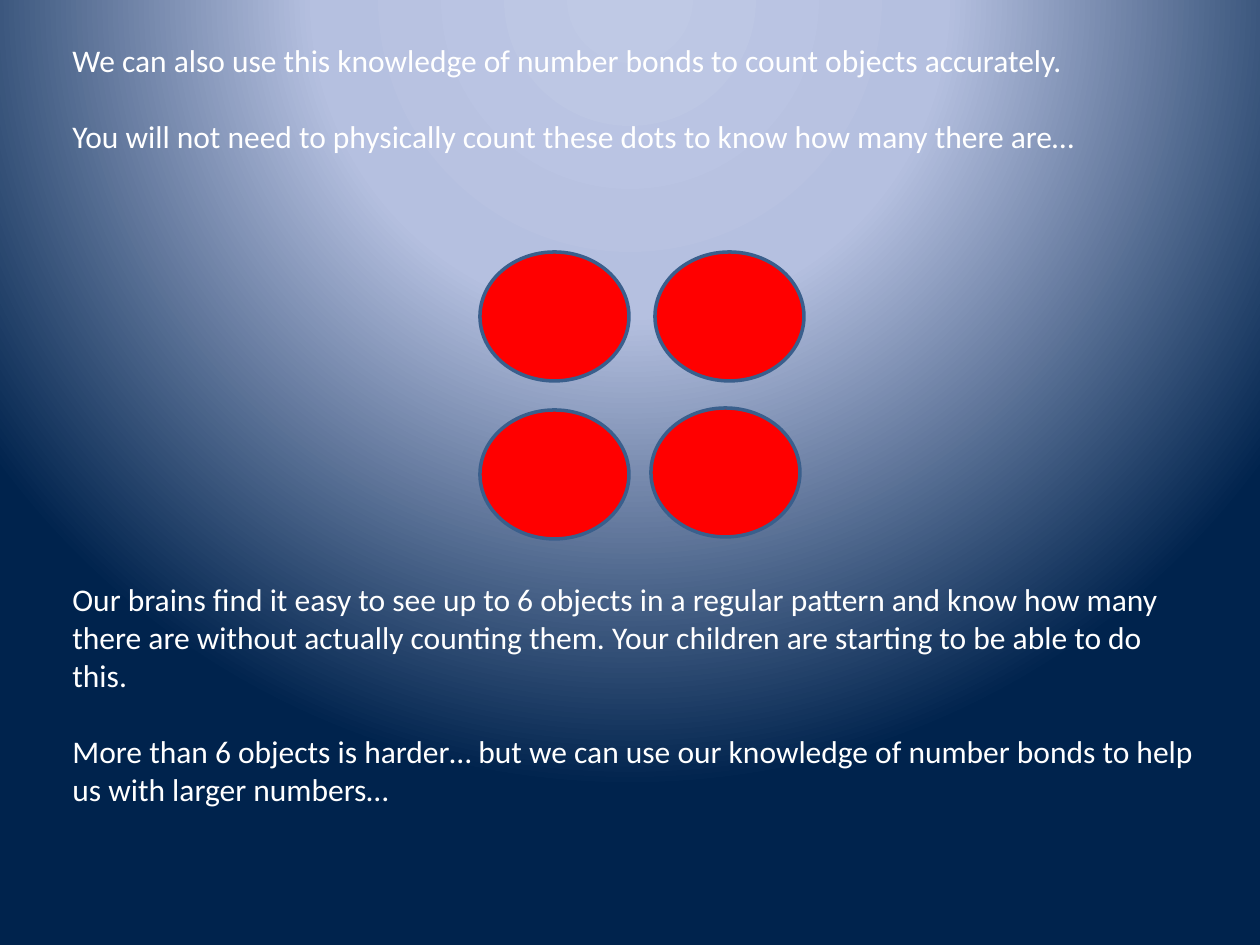
"""Build a slide on counting a regular pattern of dots with number bonds."""
from lxml import etree
from pptx import Presentation
from pptx import util as u
from pptx.dml.color import RGBColor
from pptx.enum import shapes, text
from pptx.oxml import ns, parse_xml

THEME = {
    "font": "Calibri",
    "size": 18,
    "gap": 22,
    "text": "FFFFFF",
    "dot": "FF0000",
    "outline": "3A5F8C",
    "outline_width": 2,
    "glow": [(0, "BFC9E5"), (40, "B5C0E0"), (100, "00234D")],
}
PX = u.Inches(1) / 126


def px(*lengths):
    return [round(length * PX) for length in lengths]


def add_text(slide, paragraphs, *, at, size=THEME["size"], color=THEME["text"], gap=THEME["gap"]):
    box = slide.shapes.add_textbox(*px(*at))
    frame = box.text_frame
    frame.word_wrap = True
    frame.auto_size = text.MSO_AUTO_SIZE.SHAPE_TO_FIT_TEXT
    for index, wording in enumerate(paragraphs):
        para = frame.add_paragraph() if index else frame.paragraphs[0]
        para.space_before = u.Pt(gap if index else 0)
        span = para.add_run()
        span.text = wording
        span.font.name = THEME["font"]
        span.font.size = u.Pt(size)
        span.font.color.rgb = RGBColor.from_string(color)


deck = Presentation()
deck.slide_width, deck.slide_height = px(1260, 945)
page = deck.slides.add_slide(deck.slide_layouts[6])

page.background.fill.gradient()
gradient = page.element.find(".//" + ns.qn("a:gradFill"))
for child in list(gradient):
    gradient.remove(child)
stops = etree.SubElement(gradient, ns.qn("a:gsLst"))
for percent, color in THEME["glow"]:
    stop = etree.SubElement(stops, ns.qn("a:gs"), pos=str(percent * 1000))
    etree.SubElement(stop, ns.qn("a:srgbClr"), val=color)
gradient.append(parse_xml(
    f'<a:path {ns.nsdecls("a")} path="circle">'
    '<a:fillToRect l="50000" t="-80000" r="50000" b="180000"/></a:path>'
))

add_text(page, [
    "We can also use this knowledge of number bonds to count objects accurately.",
    "You will not need to physically count these dots to know how many there are…",
], at=(60, 35, 1142, 127))

for left, top in [(480, 252), (655, 252), (480, 410), (651, 408)]:
    dot = page.shapes.add_shape(shapes.MSO_SHAPE.OVAL, *px(left, top, 149, 129))
    dot.shadow.inherit = False
    dot.fill.solid()
    dot.fill.fore_color.rgb = RGBColor.from_string(THEME["dot"])
    dot.line.color.rgb = RGBColor.from_string(THEME["outline"])
    dot.line.width = u.Pt(THEME["outline_width"])

add_text(page, [
    "Our brains find it easy to see up to 6 objects in a regular pattern and know how many "
    "there are without actually counting them. Your children are starting to be able to do this.",
    "More than 6 objects is harder… but we can use our knowledge of number bonds to help "
    "us with larger numbers…",
], at=(60, 574, 1154, 242))

deck.save("out.pptx")
